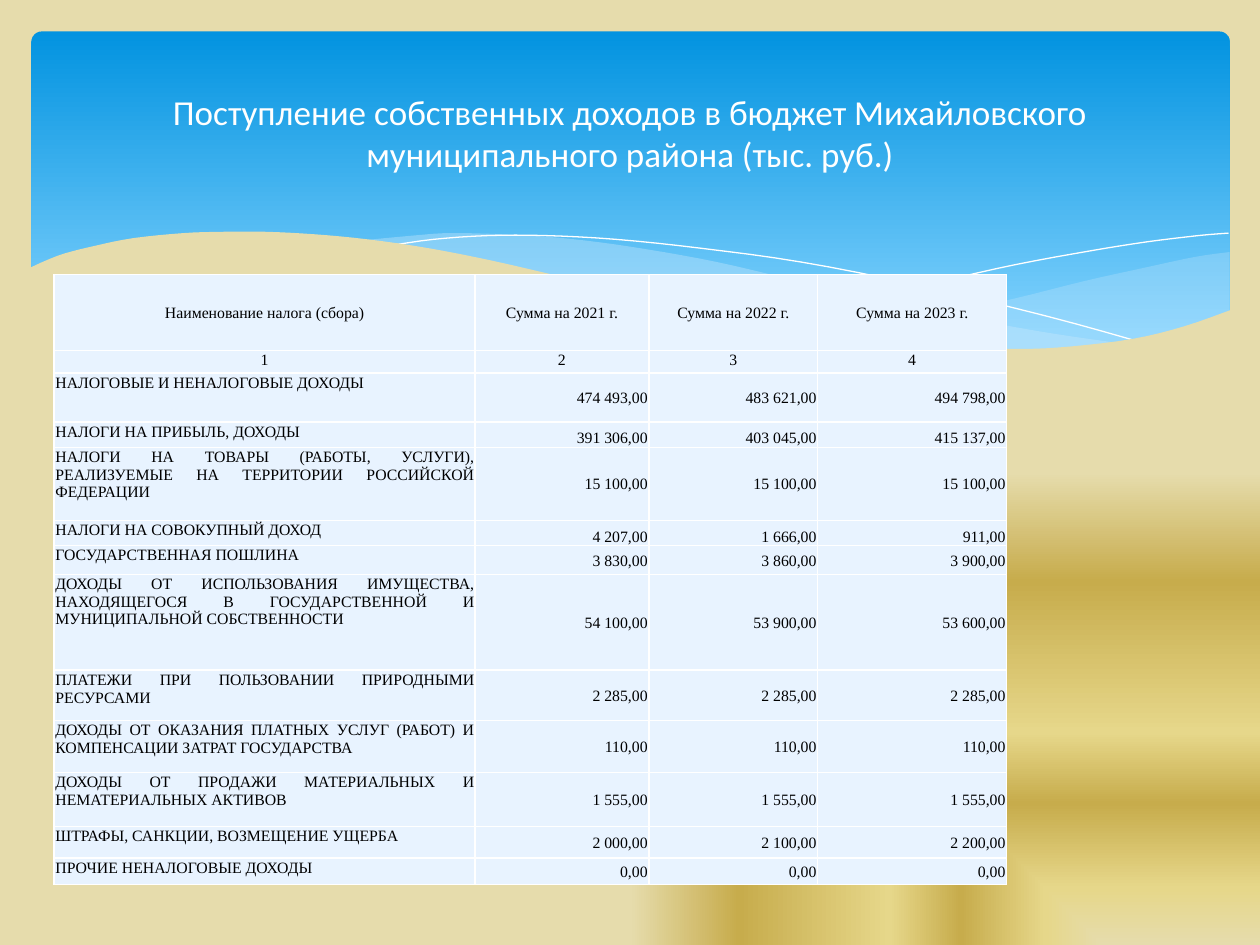
"""Build the slide on own revenues of the Mikhailovsky district budget."""
from lxml import etree
from pptx import Presentation
from pptx.dml.color import RGBColor
from pptx.enum.shapes import MSO_SHAPE
from pptx.enum.text import MSO_ANCHOR, PP_ALIGN
from pptx.oxml.ns import qn
from pptx.util import Inches, Pt

ROUND_RECT = MSO_SHAPE.ROUNDED_RECTANGLE
TOP, MIDDLE, BOTTOM = MSO_ANCHOR.TOP, MSO_ANCHOR.MIDDLE, MSO_ANCHOR.BOTTOM
CENTER, RIGHT, JUSTIFY = PP_ALIGN.CENTER, PP_ALIGN.RIGHT, PP_ALIGN.JUSTIFY

TITLE = "Поступление собственных доходов в бюджет Михайловского муниципального района (тыс. руб.)"
ROWS = [
    (0.6, MIDDLE, "Наименование налога (сбора)", "Сумма на 2021 г.", "Сумма на 2022 г.", "Сумма на 2023 г."),
    (0.18, TOP, "1", "2", "3", "4"),
    (0.39, MIDDLE, "НАЛОГОВЫЕ И НЕНАЛОГОВЫЕ ДОХОДЫ", "474 493,00", "483 621,00", "494 798,00"),
    (0.2, BOTTOM, "НАЛОГИ НА ПРИБЫЛЬ, ДОХОДЫ", "391 306,00", "403 045,00", "415 137,00"),
    (0.58, MIDDLE, "НАЛОГИ НА ТОВАРЫ (РАБОТЫ, УСЛУГИ), РЕАЛИЗУЕМЫЕ НА ТЕРРИТОРИИ РОССИЙСКОЙ ФЕДЕРАЦИИ",
     "15 100,00", "15 100,00", "15 100,00"),
    (0.2, BOTTOM, "НАЛОГИ НА СОВОКУПНЫЙ ДОХОД", "4 207,00", "1 666,00", "911,00"),
    (0.23, MIDDLE, "ГОСУДАРСТВЕННАЯ ПОШЛИНА", "3 830,00", "3 860,00", "3 900,00"),
    (0.76, MIDDLE, "ДОХОДЫ ОТ ИСПОЛЬЗОВАНИЯ ИМУЩЕСТВА, НАХОДЯЩЕГОСЯ В ГОСУДАРСТВЕННОЙ И МУНИЦИПАЛЬНОЙ СОБСТВЕННОСТИ",
     "54 100,00", "53 900,00", "53 600,00"),
    (0.4, MIDDLE, "ПЛАТЕЖИ ПРИ ПОЛЬЗОВАНИИ ПРИРОДНЫМИ РЕСУРСАМИ", "2 285,00", "2 285,00", "2 285,00"),
    (0.41, MIDDLE, "ДОХОДЫ ОТ ОКАЗАНИЯ ПЛАТНЫХ УСЛУГ (РАБОТ) И КОМПЕНСАЦИИ ЗАТРАТ ГОСУДАРСТВА",
     "110,00", "110,00", "110,00"),
    (0.43, MIDDLE, "ДОХОДЫ ОТ ПРОДАЖИ МАТЕРИАЛЬНЫХ И НЕМАТЕРИАЛЬНЫХ АКТИВОВ", "1 555,00", "1 555,00", "1 555,00"),
    (0.25, MIDDLE, "ШТРАФЫ, САНКЦИИ, ВОЗМЕЩЕНИЕ УЩЕРБА", "2 000,00", "2 100,00", "2 200,00"),
    (0.21, MIDDLE, "ПРОЧИЕ НЕНАЛОГОВЫЕ ДОХОДЫ", "0,00", "0,00", "0,00"),
]
COLUMN_WIDTHS = [3.34, 1.38, 1.34, 1.5]
HEADER_ROWS = 2

SAND, WHITE, BLACK, PALE_BLUE, CELL_BLUE = "E6DCAC", "FFFFFF", "000000", "C6E7FC", "E8F3FF"
SAND_STOPS = [(0, SAND), (12, "E6D78A"), (30, "C7AC4C"), (45, "E6D78A"), (77, "C7AC4C"), (100, SAND)]
SKY_STOPS = [(0, "0293E0"), (90, "83D3FE")]

RIGHT_WAVE = [
    [(9.76, 2), (9.48, 2.04), (9.06, 2.13), (8.61, 2.23), (8.05, 2.37), (7.53, 2.48), (7.06, 2.57), (6.61, 2.65)],
    [(6.61, 2.65), (7.05, 2.71), (7.45, 2.75), (7.81, 2.77), (8.14, 2.78), (8.54, 2.76), (8.89, 2.72),
     (9.21, 2.65), (9.49, 2.57), (9.76, 2.47)],
]
MIDDLE_WAVE = [
    [(8.93, 2.73), (8.37, 2.65), (7.75, 2.54), (7.06, 2.4), (6.29, 2.22), (5.69, 2.08), (5.14, 1.98),
     (4.65, 1.91), (4.2, 1.87), (3.61, 1.85), (3.28, 1.87), (2.86, 1.91)],
    [(2.86, 1.91), (3.42, 1.99), (4.04, 2.11), (4.49, 2.22), (5.3, 2.4), (6.01, 2.55), (6.65, 2.66),
     (7.22, 2.74), (7.73, 2.77), (8.18, 2.78), (8.57, 2.77), (8.93, 2.73)],
]
FALLING_LINE = [[(3.09, 1.95), (3.44, 1.9), (3.87, 1.87), (4.33, 1.87), (4.89, 1.9), (5.56, 1.97), (6.36, 2.08),
                 (7.27, 2.26), (8.31, 2.51), (9.07, 2.72)]]
RISING_LINE = [[(6.13, 2.57), (6.53, 2.46), (6.95, 2.35), (7.48, 2.23), (8.06, 2.1), (8.66, 1.99), (9.1, 1.92),
                (9.51, 1.87), (9.75, 1.85)]]
SAND_WAVE = [
    [(9.77, 2.46), (9.4, 2.59), (8.99, 2.69), (8.5, 2.75), (8.09, 2.77), (7.61, 2.75), (7.08, 2.7), (6.48, 2.62),
     (5.79, 2.5), (5.03, 2.33), (4.47, 2.2), (3.91, 2.07), (3.4, 1.97), (2.92, 1.9), (2.5, 1.86), (2.11, 1.84),
     (1.77, 1.84), (1.46, 1.85), (1.06, 1.89), (0.76, 1.95), (0.52, 2.01), (0.36, 2.07), (0.23, 2.13)],
    [(0.23, 3.29), (9.77, 3.29)],
]


def color(hex_code):
    return RGBColor.from_string(hex_code)


def set_stops(gradient, stops):
    stop_list = gradient.find(qn("a:gsLst"))
    for old_stop in list(stop_list):
        stop_list.remove(old_stop)
    for position, hex_code in stops:
        stop = etree.SubElement(stop_list, qn("a:gs"), pos=str(position * 1000))
        etree.SubElement(stop, qn("a:srgbClr"), val=hex_code)


def smooth_curve(points, steps=4):
    padded = [points[0], *points, points[-1]]
    curve = [points[0]]
    for a, b, c, d in zip(padded, padded[1:], padded[2:], padded[3:]):
        for step in range(1, steps + 1):
            t = step / steps
            curve.append(tuple(
                (2 * q + (r - p) * t + (2 * p - 5 * q + 4 * r - s) * t ** 2 + (3 * q - p - 3 * r + s) * t ** 3) / 2
                for p, q, r, s in zip(a, b, c, d)))
    return curve


def add_wave(slide, curves, fill=None, opacity=100):
    points = [(Inches(x), Inches(y)) for curve in curves for x, y in smooth_curve(curve)]
    builder = slide.shapes.build_freeform(*points[0])
    builder.add_line_segments(points[1:], close=fill is not None)
    wave = builder.convert_to_shape()
    wave.shadow.inherit = False
    if fill is None:
        wave.fill.background()
        wave.line.color.rgb = color(WHITE)
        wave.line.width = Pt(0)
        return
    wave.line.fill.background()
    wave.fill.solid()
    wave.fill.fore_color.rgb = color(fill)
    tint = wave.element.spPr.find(qn("a:solidFill")).find(qn("a:srgbClr"))
    etree.SubElement(tint, qn("a:alpha"), val=str(opacity * 1000))


def add_backdrop(slide):
    slide.background.fill.gradient()
    gradient = next(slide.element.iter(qn("a:gradFill")))
    set_stops(gradient, SAND_STOPS)
    gradient.remove(gradient.find(qn("a:lin")))
    shade = etree.SubElement(gradient, qn("a:path"), attrib={"path": "rect"})
    etree.SubElement(shade, qn("a:fillToRect"), l="100000", t="100000")

    sky = slide.shapes.add_shape(ROUND_RECT, Inches(0.25), Inches(0.25), Inches(9.51), Inches(2.7))
    sky.adjustments[0] = 0.03
    sky.shadow.inherit = False
    sky.line.fill.background()
    sky.fill.gradient()
    sky.fill.gradient_angle = 270
    set_stops(sky.element.spPr.find(qn("a:gradFill")), SKY_STOPS)

    add_wave(slide, RIGHT_WAVE, PALE_BLUE, 29)
    add_wave(slide, MIDDLE_WAVE, PALE_BLUE, 40)
    add_wave(slide, FALLING_LINE)
    add_wave(slide, RISING_LINE)
    add_wave(slide, SAND_WAVE, SAND)


def format_cell(cell, text, anchor, alignment):
    cell.text_frame.text = text
    cell.vertical_anchor = anchor
    cell.margin_left = cell.margin_right = cell.margin_top = Inches(0.01)
    cell.margin_bottom = 0
    paragraph = cell.text_frame.paragraphs[0]
    paragraph.alignment = alignment
    font = paragraph.runs[0].font
    font.name, font.size, font.color.rgb = "Times New Roman", Pt(9), color(BLACK)
    properties = cell._tc.get_or_add_tcPr()
    for side in ("a:lnL", "a:lnR", "a:lnT", "a:lnB"):
        border = etree.SubElement(properties, qn(side), w=str(Pt(1)))
        etree.SubElement(etree.SubElement(border, qn("a:solidFill")), qn("a:srgbClr"), val=WHITE)
    cell.fill.solid()
    cell.fill.fore_color.rgb = color(CELL_BLUE)


def add_revenues(slide):
    height = sum(row[0] for row in ROWS)
    revenues = slide.shapes.add_table(len(ROWS), len(COLUMN_WIDTHS), Inches(0.43), Inches(2.18),
                                      Inches(sum(COLUMN_WIDTHS)), Inches(height)).table
    revenues.first_row = revenues.horz_banding = False
    for column, width in zip(revenues.columns, COLUMN_WIDTHS):
        column.width = Inches(width)
    for row_index, (row_height, anchor, *texts) in enumerate(ROWS):
        revenues.rows[row_index].height = Inches(row_height)
        for column_index, text in enumerate(texts):
            cell = revenues.cell(row_index, column_index)
            if row_index < HEADER_ROWS:
                format_cell(cell, text, anchor, CENTER)
            elif column_index == 0:
                format_cell(cell, text, TOP, JUSTIFY)
            else:
                format_cell(cell, text, anchor, RIGHT)


def add_title(slide):
    title = slide.shapes.title
    title.left, title.top, title.width, title.height = Inches(0.5), Inches(0.37), Inches(9), Inches(1.37)
    title.text_frame.text = TITLE
    title.text_frame.vertical_anchor = MIDDLE
    paragraph = title.text_frame.paragraphs[0]
    paragraph.alignment = CENTER
    font = paragraph.runs[0].font
    font.name, font.size, font.color.rgb = "Calibri", Pt(20), color(WHITE)
    title.element.getparent().append(title.element)


def main():
    deck = Presentation()
    deck.slide_width, deck.slide_height = Inches(10), Inches(7.5)
    slide = deck.slides.add_slide(deck.slide_layouts[5])
    add_backdrop(slide)
    add_revenues(slide)
    add_title(slide)
    deck.save("out.pptx")


if __name__ == "__main__":
    main()
